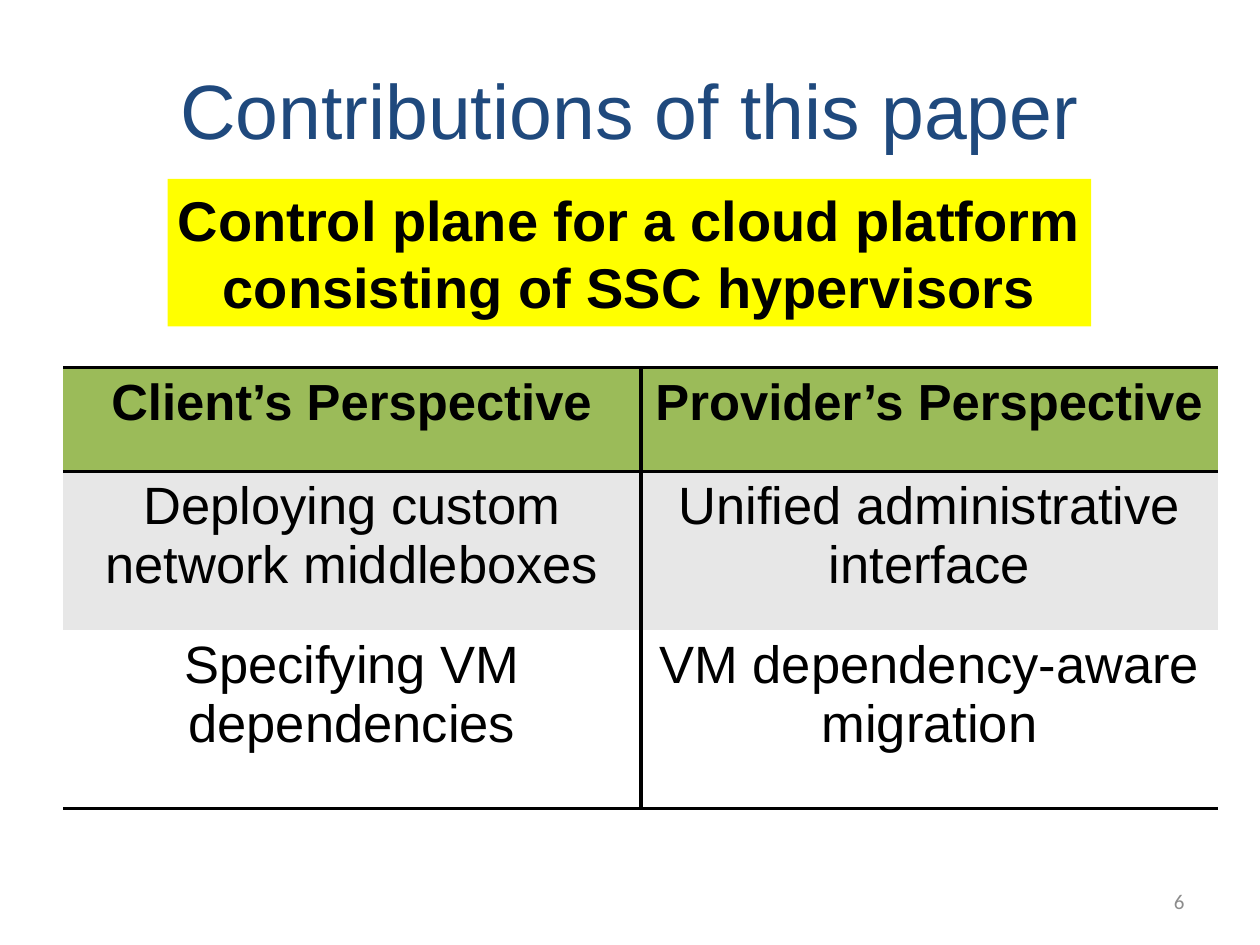
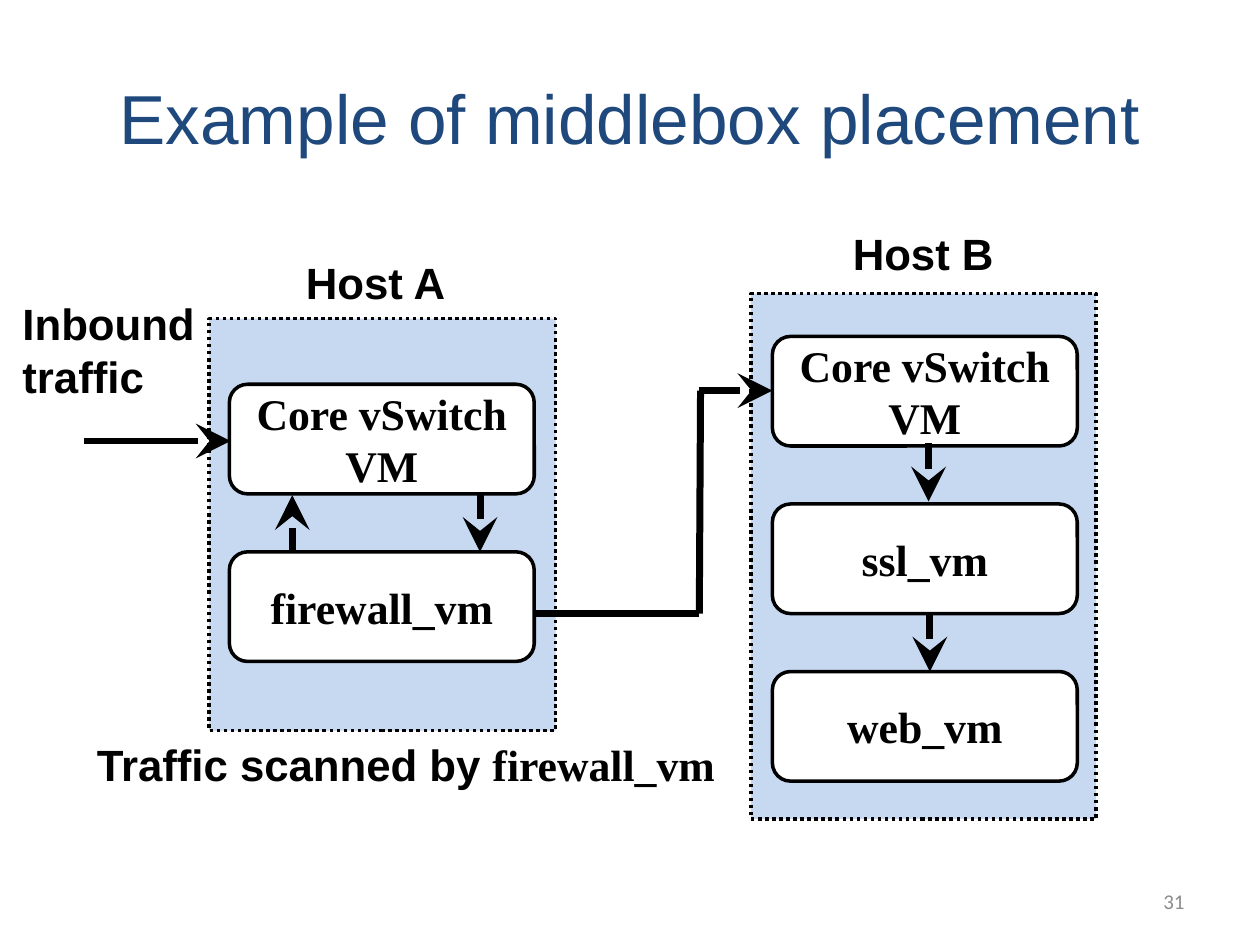
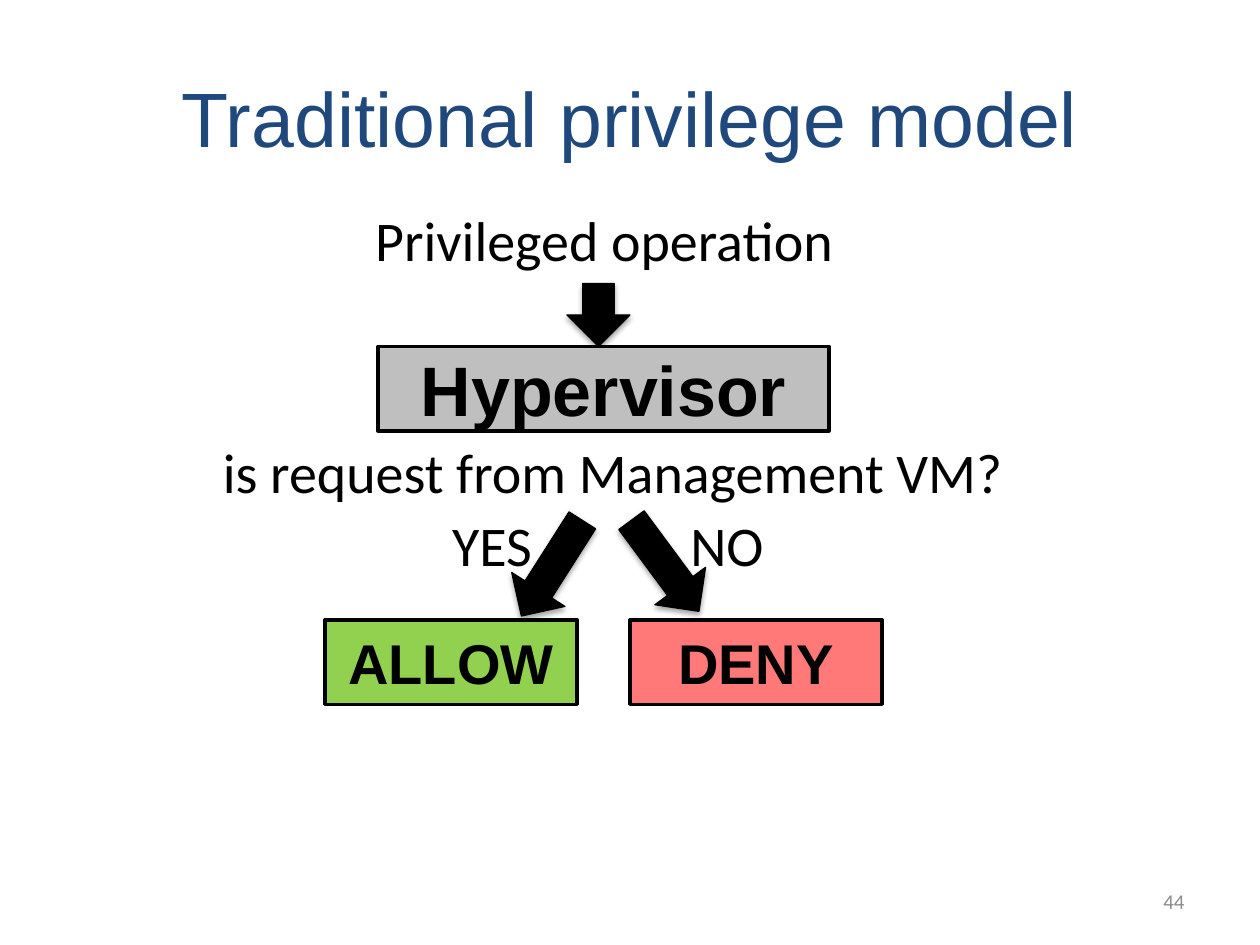
"""Builds three slides on a cloud control plane, middlebox placement and privilege checks."""
from dataclasses import dataclass
from typing import NamedTuple

from lxml import etree
from pptx import Presentation
from pptx.dml.color import RGBColor
from pptx.enum.dml import MSO_LINE
from pptx.enum.shapes import MSO_CONNECTOR, MSO_SHAPE
from pptx.enum.text import MSO_ANCHOR, PP_ALIGN
from pptx.oxml.ns import qn
from pptx.presentation import Presentation as Deck
from pptx.shapes.autoshape import Shape
from pptx.slide import Slide
from pptx.table import _Cell
from pptx.text.text import TextFrame
from pptx.util import Inches, Pt

LEFT, CENTER, RIGHT = PP_ALIGN.LEFT, PP_ALIGN.CENTER, PP_ALIGN.RIGHT
TOP, MIDDLE = MSO_ANCHOR.TOP, MSO_ANCHOR.MIDDLE
RECT, ROUNDED = MSO_SHAPE.RECTANGLE, MSO_SHAPE.ROUNDED_RECTANGLE
DOWN_ARROW = MSO_SHAPE.DOWN_ARROW
STRAIGHT = MSO_CONNECTOR.STRAIGHT
DOTTED = MSO_LINE.ROUND_DOT


class Style(NamedTuple):
    """Font, size, colour and weight of a text."""
    font: str
    size: float
    color: str = "000000"
    bold: bool = False


@dataclass(frozen=True)
class Theme:
    """Colours, text styles and line widths of the deck."""
    black: str = "000000"
    white: str = "FFFFFF"
    highlight: str = "FFFF00"
    header: str = "9BBB59"
    band: str = "E7E7E7"
    host: str = "C6D9F1"
    hypervisor: str = "BFBFBF"
    allow: str = "92D050"
    deny: str = "FF7979"
    title: Style = Style("Arial", 44, "1F497D")
    long_title: Style = Style("Arial", 39.6, "1F497D")
    page: Style = Style("Calibri", 12, "8C8C8C")
    claim: Style = Style("Arial", 32, bold=True)
    column_head: Style = Style("Arial", 29, bold=True)
    table_body: Style = Style("Arial", 30)
    label: Style = Style("Arial", 25, bold=True)
    machine: Style = Style("Times New Roman", 25, bold=True)
    step: Style = Style("Calibri", 32)
    component: Style = Style("Arial", 40, bold=True)
    outline: float = 2
    divider: float = 2.25
    flow: float = 4


THEME = Theme()


class Box(NamedTuple):
    """Place of an element in inches."""
    left: float
    top: float
    width: float
    height: float

    def lengths(self) -> list[Inches]:
        """Return the four values as lengths."""
        return [Inches(value) for value in self]


class Node(NamedTuple):
    """A filled shape with a text."""
    text: str
    box: Box
    fill: str
    style: Style
    kind: MSO_SHAPE = RECT


class Label(NamedTuple):
    """Free text that does not wrap."""
    lines: tuple[str, ...]
    box: Box
    style: Style


class Flow(NamedTuple):
    """A straight line between two points."""
    x1: float
    y1: float
    x2: float
    y2: float
    arrow: bool = True


def rgb(color: str) -> RGBColor:
    """Turn a hex code into a colour."""
    return RGBColor.from_string(color)


def write(frame: TextFrame, lines: tuple[str, ...], style: Style, align: PP_ALIGN) -> None:
    """Write one paragraph per line in one style."""
    for number, line in enumerate(lines):
        paragraph = frame.add_paragraph() if number else frame.paragraphs[0]
        paragraph.text = line
        paragraph.alignment = align
        font = paragraph.font
        font.name, font.size, font.bold = style.font, Pt(style.size), style.bold
        font.color.rgb = rgb(style.color)


def add_text(slide: Slide, lines: tuple[str, ...], box: Box, style: Style,
             align: PP_ALIGN = CENTER, anchor: MSO_ANCHOR = MIDDLE,
             wrap: bool = True) -> TextFrame:
    """Add a text box."""
    frame = slide.shapes.add_textbox(*box.lengths()).text_frame
    frame.word_wrap = wrap
    frame.vertical_anchor = anchor
    write(frame, lines, style, align)
    return frame


def add_label(slide: Slide, label: Label) -> TextFrame:
    """Add a label that keeps its own line breaks."""
    return add_text(slide, label.lines, label.box, label.style, LEFT, TOP, False)


def add_block(slide: Slide, kind: MSO_SHAPE, box: Box, fill: str, width: float = 0) -> Shape:
    """Add a filled shape, outlined in black when a width is given."""
    block = slide.shapes.add_shape(kind, *box.lengths())
    block.shadow.inherit = False
    block.fill.solid()
    block.fill.fore_color.rgb = rgb(fill)
    if width:
        block.line.color.rgb = rgb(THEME.black)
        block.line.width = Pt(width)
    else:
        block.line.fill.background()
    return block


def add_node(slide: Slide, node: Node) -> None:
    """Add an outlined shape with centred text."""
    frame = add_block(slide, node.kind, node.box, node.fill, THEME.outline).text_frame
    frame.word_wrap = True
    frame.vertical_anchor = MIDDLE
    write(frame, (node.text,), node.style, CENTER)


def add_flow(slide: Slide, flow: Flow, width: float = THEME.flow) -> None:
    """Add a line, with an arrowhead at its end if asked."""
    ends = [Inches(value) for value in flow[:4]]
    connector = slide.shapes.add_connector(STRAIGHT, *ends)
    connector.line.color.rgb = rgb(THEME.black)
    connector.line.width = Pt(width)
    if flow.arrow:
        etree.SubElement(connector.line._get_or_add_ln(), qn("a:tailEnd"),
                         type="stealth", w="lg", len="lg")
    etree.SubElement(connector._element.spPr, qn("a:effectLst"))


def add_decision_arrow(slide: Slide, box: Box, rotation: float = 0) -> None:
    """Add a black block arrow with a soft shadow."""
    arrow = add_block(slide, DOWN_ARROW, box, THEME.black, 0.75)
    arrow.rotation = rotation
    effects = arrow._element.spPr.find(qn("a:effectLst"))
    shadow = etree.SubElement(effects, qn("a:outerShdw"), blurRad=str(Pt(3.1)),
                              dist=str(Pt(1.8)), dir="5400000", rotWithShape="0")
    color = etree.SubElement(shadow, qn("a:srgbClr"), val=THEME.black)
    etree.SubElement(color, qn("a:alpha"), val="35000")


def set_borders(cell: _Cell, ruled: str) -> None:
    """Rule the named sides of a cell and clear the others."""
    properties = cell._tc.get_or_add_tcPr()
    for position, side in enumerate("LRTB"):
        border = etree.Element(qn(f"a:ln{side}"), w=str(Pt(THEME.outline)))
        if side in ruled:
            fill = etree.SubElement(border, qn("a:solidFill"))
            etree.SubElement(fill, qn("a:srgbClr"), val=THEME.black)
        else:
            etree.SubElement(border, qn("a:noFill"))
        properties.insert(position, border)


def start_slide(deck: Deck, title: str, page: int, style: Style = THEME.title,
                title_box: Box = Box(0.5, 0.3, 9, 1.25)) -> Slide:
    """Add a blank slide with title and page number."""
    slide = deck.slides.add_slide(deck.slide_layouts[6])
    add_text(slide, (title,), title_box, style)
    add_text(slide, (str(page),), Box(7.17, 6.95, 2.33, 0.4), THEME.page, RIGHT)
    return slide


def add_perspectives(slide: Slide) -> None:
    """Add the table of client and provider perspectives."""
    rows = (
        (0.82, THEME.header, THEME.column_head, "TB",
         ("Client’s Perspective", "Provider’s Perspective")),
        (1.26, THEME.band, THEME.table_body, "T",
         ("Deploying custom network middleboxes", "Unified administrative interface")),
        (1.42, THEME.white, THEME.table_body, "B",
         ("Specifying VM dependencies", "VM dependency-aware migration")),
    )
    box = Box(0.5, 2.92, 9.17, 3.5)
    table = slide.shapes.add_table(len(rows), 2, *box.lengths()).table
    table.first_row = table.horz_banding = False
    for row, (height, fill, style, ruled, texts) in enumerate(rows):
        table.rows[row].height = Inches(height)
        for column, text in enumerate(texts):
            cell = table.cell(row, column)
            cell.fill.solid()
            cell.fill.fore_color.rgb = rgb(fill)
            write(cell.text_frame, (text,), style, CENTER)
            set_borders(cell, ruled)
    middle = box.left + box.width / 2
    add_flow(slide, Flow(middle, box.top + box.height, middle, box.top, False), THEME.divider)


def build_contributions(deck: Deck) -> None:
    """Build the slide on the contributions."""
    slide = start_slide(deck, "Contributions of this paper", 6,
                        title_box=Box(0.5, 0.17, 9, 1.38))
    add_block(slide, RECT, Box(1.33, 1.42, 7.33, 1.17), THEME.highlight)
    claim = add_text(slide, ("Control plane for a cloud platform consisting of SSC hypervisors",),
                     Box(0.33, 1.42, 9.33, 1.17), THEME.claim, anchor=TOP)
    claim.paragraphs[0].space_before = Pt(6.4)
    add_perspectives(slide)


def build_placement(deck: Deck) -> None:
    """Build the slide on middlebox placement."""
    slide = start_slide(deck, "Example of middlebox placement", 31, THEME.long_title)
    for host in (Box(1.66, 2.53, 2.75, 3.27), Box(5.96, 2.33, 2.74, 4.17)):
        add_block(slide, RECT, host, THEME.host, THEME.outline).line.dash_style = DOTTED

    switch, pitch = "Core vSwitch VM", 1.33
    stacks = ((1.82, 3.05, (switch, "firewall_vm")),
              (6.13, 2.67, (switch, "ssl_vm", "web_vm")))
    for left, top, machines in stacks:
        for level, machine in enumerate(machines):
            box = Box(left, top + level * pitch, 2.42, 0.87)
            add_node(slide, Node(machine, box, THEME.white, THEME.machine, ROUNDED))

    for flow in (
        Flow(0.67, 3.5, 1.83, 3.5),
        Flow(3.81, 3.92, 3.81, 4.38),
        Flow(2.32, 4.39, 2.32, 3.93),
        Flow(4.24, 4.87, 5.55, 4.87, False),
        Flow(5.56, 3.1, 5.55, 4.87, False),
        Flow(5.55, 3.1, 6.13, 3.1),
        Flow(7.37, 3.52, 7.37, 3.98),
        Flow(7.38, 4.87, 7.38, 5.33),
    ):
        add_flow(slide, flow)

    for label in (
        Label(("Host A",), Box(2.33, 1.98, 1.32, 0.52), THEME.label),
        Label(("Host B",), Box(6.67, 1.75, 1.33, 0.52), THEME.label),
        Label(("Inbound", "traffic"), Box(0.08, 2.31, 1.58, 0.94), THEME.label),
    ):
        add_label(slide, label)
    caption = add_label(slide, Label(("Traffic scanned by ",), Box(0.67, 5.81, 5.29, 0.52),
                                     THEME.label))
    scanner = caption.paragraphs[0].add_run()
    scanner.text = "firewall_vm"
    scanner.font.name = THEME.machine.font


def build_privilege(deck: Deck) -> None:
    """Build the slide on the traditional privilege model."""
    slide = start_slide(deck, "Traditional privilege model", 44)
    add_decision_arrow(slide, Box(4.5, 2.25, 0.5, 0.5))
    add_decision_arrow(slide, Box(4.13, 4.06, 0.5, 0.9), 32.5)
    add_decision_arrow(slide, Box(5.03, 4.04, 0.5, 0.9), 323.5)
    for node in (
        Node("Hypervisor", Box(3, 2.75, 3.58, 0.67), THEME.hypervisor, THEME.component),
        Node("ALLOW", Box(2.58, 4.92, 2, 0.67), THEME.allow, THEME.claim),
        Node("DENY", Box(5, 4.92, 2, 0.67), THEME.deny, THEME.claim),
    ):
        add_node(slide, node)
    for text, left, top, width in (
        ("Privileged operation", 2.88, 1.58, 3.87),
        ("is request from Management VM?", 1.67, 3.42, 6.45),
        ("YES", 3.49, 4, 0.84),
        ("NO", 5.38, 4, 0.79),
    ):
        add_label(slide, Label((text,), Box(left, top, width, 0.64), THEME.step))


def main() -> None:
    """Build and save the deck."""
    deck = Presentation()
    deck.slide_width, deck.slide_height = Inches(10), Inches(7.5)
    build_contributions(deck)
    build_placement(deck)
    build_privilege(deck)
    deck.save("out.pptx")


if __name__ == "__main__":
    main()
